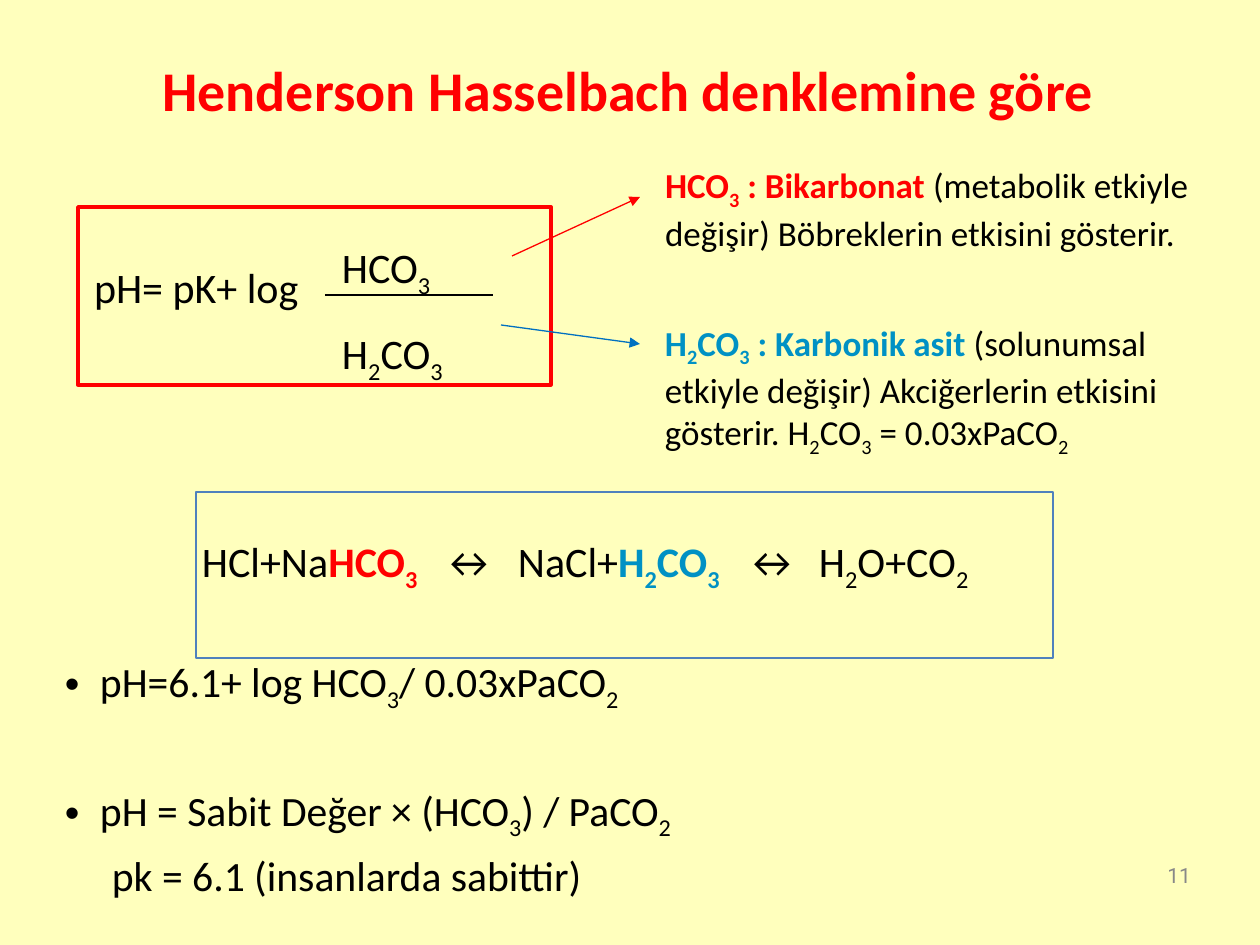
from dataclasses import dataclass
from lxml.etree import SubElement
from pptx import Presentation
from pptx.dml.color import RGBColor
from pptx.enum.shapes import MSO_CONNECTOR, MSO_SHAPE
from pptx.enum.text import MSO_ANCHOR, PP_ALIGN
from pptx.oxml.ns import qn
from pptx.util import Emu, Pt


@dataclass(frozen=True)
class Theme:
    background: str = "FFFFBD"
    text: str = "000000"
    bicarbonate: str = "FF0000"
    carbonic: str = "0091C4"
    carbonic_arrow: str = "0070C0"
    equation_border: str = "4F81BD"
    muted: str = "888888"
    font: str = "Calibri"
    number_font: str = "Roboto"
    title_size: float = 32
    formula_size: float = 24
    body_size: float = 23.8
    note_size: float = 20
    number_size: float = 12


THEME = Theme()
PIXELS_PER_INCH = 126
INSET = 6


def px(length):
    return Emu(round(length * 914400 / PIXELS_PER_INCH))


def set_attributes(target, values):
    for name, value in values.items():
        setattr(target, name, value)


def add_run(paragraph, text, size, color, bold, font, subscript=False):
    run = paragraph.add_run()
    run.text = text
    set_attributes(run.font, {"size": Pt(size), "name": font, "bold": bold})
    run.font.color.rgb = RGBColor.from_string(color)
    if subscript:
        run.font._element.set("baseline", "-25000")


def add_formula(paragraph, text, size, color=THEME.text, bold=False, font=THEME.font):
    first, *others = text.split("_")
    if first:
        add_run(paragraph, first, size, color, bold, font)
    for part in others:
        add_run(paragraph, part[0], size, color, bold, font, subscript=True)
        if part[1:]:
            add_run(paragraph, part[1:], size, color, bold, font)


def prepare_frame(shape, anchor=MSO_ANCHOR.TOP, top_inset=INSET):
    frame = shape.text_frame
    set_attributes(frame, {
        "word_wrap": True, "vertical_anchor": anchor,
        "margin_left": px(INSET), "margin_right": px(INSET),
        "margin_top": px(top_inset), "margin_bottom": px(INSET),
    })
    return frame


def add_text_box(slide, box, anchor=MSO_ANCHOR.TOP):
    return prepare_frame(slide.shapes.add_textbox(*map(px, box)), anchor)


def add_outline(slide, box, color, width):
    shape = slide.shapes.add_shape(MSO_SHAPE.RECTANGLE, *map(px, box))
    shape.shadow.inherit = False
    shape.fill.background()
    shape.line.color.rgb = RGBColor.from_string(color)
    shape.line.width = Pt(width)
    return shape


def add_line(slide, start, end, color, arrow=False):
    connector = slide.shapes.add_connector(
        MSO_CONNECTOR.STRAIGHT, *map(px, (*start, *end)))
    connector.line.color.rgb = RGBColor.from_string(color)
    connector.line.width = Pt(0.75)
    if arrow:
        SubElement(connector.line._get_or_add_ln(), qn("a:tailEnd"), type="triangle")
    SubElement(connector._element.spPr, qn("a:effectLst"))


def add_label(slide, box, text, size, color, alignment, bold=False, font=THEME.font):
    paragraph = add_text_box(slide, box, MSO_ANCHOR.MIDDLE).paragraphs[0]
    paragraph.alignment = alignment
    add_formula(paragraph, text, size, color, bold, font)


def add_conclusions(slide, box):
    frame = add_text_box(slide, box)
    items = [
        ("pH=6.1+ log HCO_3/ 0.03xPaCO_2", 5, True),
        ("pH = Sabit Değer × (HCO_3) / PaCO_2", 41, True),
        ("pk = 6.1 (insanlarda sabittir)", 5, False),
    ]
    for index, (text, space_before, bulleted) in enumerate(items):
        paragraph = frame.paragraphs[0] if index == 0 else frame.add_paragraph()
        paragraph.space_before = Pt(space_before)
        properties = paragraph._p.get_or_add_pPr()
        properties.set("marL", str(px(35 if bulleted else 47)))
        if bulleted:
            properties.set("indent", str(px(-35)))
            SubElement(properties, qn("a:buFont"), typeface="Arial")
            SubElement(properties, qn("a:buChar"), char="•")
        add_formula(paragraph, text, THEME.body_size)


def add_ph_formula(slide, box):
    left, top, width, height = box
    fraction = add_text_box(slide, (left + 258, top, 159, 155))
    for index, text in enumerate(("HCO_3", "H_2CO_3")):
        paragraph = fraction.paragraphs[0] if index == 0 else fraction.add_paragraph()
        paragraph.line_spacing = 1.5
        add_formula(paragraph, text, THEME.formula_size)
    add_line(slide, (left + 247, top + 88), (left + 415, top + 88), THEME.text)
    add_outline(slide, box, THEME.bicarbonate, 2)
    left_side = add_text_box(slide, (left + 10, top + 49, 246, 62))
    add_formula(left_side.paragraphs[0], "pH= pK+ log", THEME.formula_size)


def add_explanation(slide, box, term, description, color, arrow_color, start, end):
    left, top, width, height = box
    paragraph = add_text_box(slide, box).paragraphs[0]
    add_formula(paragraph, term, THEME.note_size, color, True)
    add_formula(paragraph, description, THEME.note_size)
    add_line(slide, (left + start[0], top + start[1]),
             (left + end[0], top + end[1]), arrow_color, arrow=True)


def add_reaction(slide, box):
    shape = add_outline(slide, box, THEME.equation_border, 0.75)
    paragraph = prepare_frame(shape, top_inset=44).paragraphs[0]
    paragraph.alignment = PP_ALIGN.LEFT
    stops = SubElement(paragraph._p.get_or_add_pPr(), qn("a:tabLst"))
    for position in (240, 316, 543, 617):
        SubElement(stops, qn("a:tab"), pos=str(px(position)), algn="l")
    for text, color, bold in (
        ("HCl+Na", THEME.text, False),
        ("HCO_3", THEME.bicarbonate, True),
        ("\t↔\tNaCl+", THEME.text, False),
        ("H_2CO_3", THEME.carbonic, True),
        ("\t↔\tH_2O+CO_2", THEME.text, False),
    ):
        add_formula(paragraph, text, THEME.formula_size, color, bold)


def main():
    presentation = Presentation()
    set_attributes(presentation, {"slide_width": px(1260), "slide_height": px(945)})
    slide = presentation.slides.add_slide(presentation.slide_layouts[6])
    slide.background.fill.solid()
    slide.background.fill.fore_color.rgb = RGBColor.from_string(THEME.background)

    add_label(slide, (39, 10, 1191, 158), "Henderson Hasselbach denklemine göre ",
              THEME.title_size, THEME.bicarbonate, PP_ALIGN.CENTER, bold=True)
    add_conclusions(slide, (59, 650, 921, 256))
    add_ph_formula(slide, (78, 207, 473, 178))
    add_label(slide, (903, 857, 294, 37), "11", THEME.number_size, THEME.muted,
              PP_ALIGN.RIGHT, font=THEME.number_font)
    add_reaction(slide, (196, 492, 857, 166))
    add_explanation(
        slide, (659, 158, 571, 140), "HCO_3 : Bikarbonat ",
        "(metabolik etkiyle değişir) Böbreklerin etkisini gösterir.",
        THEME.bicarbonate, THEME.bicarbonate, (-147, 98), (-19, 39))
    add_explanation(
        slide, (659, 315, 552, 194), "H_2CO_3 : Karbonik asit ",
        "(solunumsal etkiyle değişir) Akciğerlerin etkisini gösterir. "
        "H_2CO_3 = 0.03xPaCO_2",
        THEME.carbonic, THEME.carbonic_arrow, (-158, 10), (-19, 29))
    presentation.save("out.pptx")


if __name__ == "__main__":
    main()
